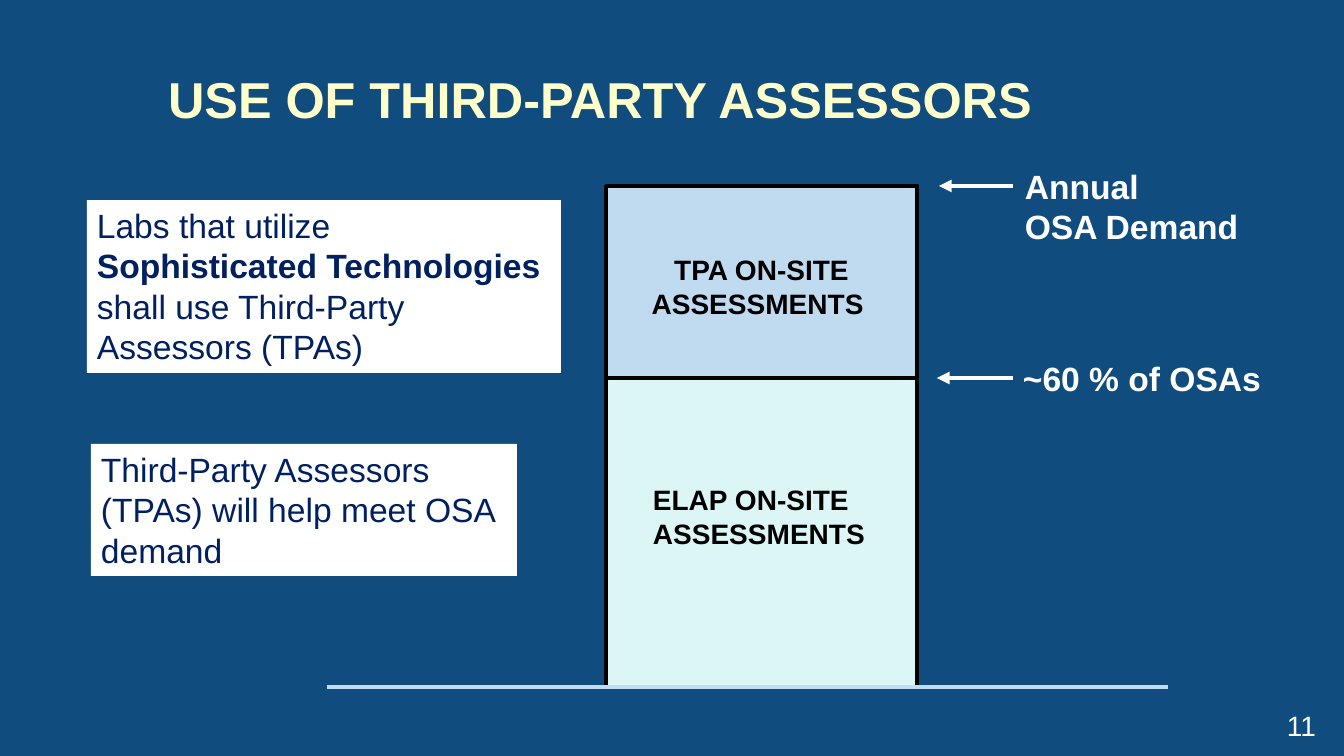
"""Build the slide on the use of third-party assessors."""
from dataclasses import dataclass

from lxml import etree
from pptx import Presentation
from pptx import util as u
from pptx.dml.color import RGBColor
from pptx.enum import shapes, text
from pptx.oxml.ns import qn

EMU_PER_PX = 914400 / 100.8
LEFT, CENTER, RIGHT = text.PP_ALIGN.LEFT, text.PP_ALIGN.CENTER, text.PP_ALIGN.RIGHT
TOP, MIDDLE = text.MSO_ANCHOR.TOP, text.MSO_ANCHOR.MIDDLE


@dataclass(frozen=True)
class Theme:
    font: str = "Arial"
    background: str = "104C7E"
    title: str = "FFFFCC"
    white: str = "FFFFFF"
    navy: str = "002060"
    black: str = "000000"
    baseline: str = "BEDDF7"
    tpa: str = "C0DBEF"
    elap: str = "DBF6F5"
    title_size: int = 36
    body_size: int = 24
    label_size: int = 20


THEME = Theme()

TITLE = [[("USE OF THIRD-PARTY ASSESSORS", True)]]
TITLE_BOX = (158, 18, 1179, 160)

BAR_LEFT, BAR_WIDTH = 606, 311
BASELINE_LEFT, BASELINE_RIGHT, BASELINE_Y = 327, 1168, 687
BARS = [
    {"top": 186, "fill": THEME.tpa, "line": 2.5},
    {"top": 378, "fill": THEME.elap, "line": 2.75},
]
BAR_LABELS = [
    {"box": (625, 248, 273, 78), "align": CENTER,
     "paragraphs": [[("TPA ON-SITE ASSESSMENTS ", True)]]},
    {"box": (643, 478, 237, 78), "align": LEFT,
     "paragraphs": [[("ELAP ON-SITE ASSESSMENTS", True)]]},
]

NOTES = [
    {"box": (87, 200, 474, 173),
     "paragraphs": [[("Labs that utilize ", False), ("Sophisticated Technologies ", True),
                     ("shall use Third-Party Assessors (TPAs)", False)]]},
    {"box": (91, 444, 426, 132),
     "paragraphs": [[("Third-Party Assessors (TPAs) will help meet OSA demand", False)]]},
]

ARROW_START = 1013
CALLOUTS = [
    {"tip": 939, "y": 186, "box": (1015, 161, 369, 92),
     "paragraphs": [[("Annual", True)], [("OSA Demand", True)]]},
    {"tip": 937, "y": 378, "box": (1013, 353, 343, 92),
     "paragraphs": [[("~60 % of OSAs", True)]]},
]

PAGE_NUMBER = [[("11", False)]]
PAGE_NUMBER_BOX = (1251, 706, 75, 39)


def px(length):
    return u.Emu(round(length * EMU_PER_PX))


def rgb(color):
    return RGBColor.from_string(color)


def write(shape, paragraphs, size, color, align=LEFT, anchor=TOP):
    frame = shape.text_frame
    frame.word_wrap = True
    frame.auto_size = text.MSO_AUTO_SIZE.NONE
    frame.vertical_anchor = anchor
    for index, runs in enumerate(paragraphs):
        paragraph = frame.add_paragraph() if index else frame.paragraphs[0]
        paragraph.alignment = align
        for words, bold in runs:
            run = paragraph.add_run()
            run.text = words
            run.font.name = THEME.font
            run.font.size = u.Pt(size)
            run.font.bold = bold
            run.font.color.rgb = rgb(color)


def add_text(slide, box, paragraphs, size, color, align=LEFT, anchor=TOP):
    shape = slide.shapes.add_textbox(*map(px, box))
    write(shape, paragraphs, size, color, align, anchor)
    return shape


def add_title(slide):
    title = slide.shapes.title
    title.left, title.top, title.width, title.height = map(px, TITLE_BOX)
    write(title, TITLE, THEME.title_size, THEME.title, anchor=MIDDLE)


def add_bar(slide, bar):
    shape = slide.shapes.add_shape(
        shapes.MSO_SHAPE.RECTANGLE, px(BAR_LEFT), px(bar["top"]),
        px(BAR_WIDTH), px(BASELINE_Y - bar["top"]))
    shape.shadow.inherit = False
    shape.fill.solid()
    shape.fill.fore_color.rgb = rgb(bar["fill"])
    shape.line.color.rgb = rgb(THEME.black)
    shape.line.width = u.Pt(bar["line"])


def add_line(slide, start, end, y, color, arrow=False):
    connector = slide.shapes.add_connector(
        shapes.MSO_CONNECTOR.STRAIGHT, px(start), px(y), px(end), px(y))
    connector.line.color.rgb = rgb(color)
    connector.line.width = u.Pt(3)
    if arrow:
        etree.SubElement(connector.line._get_or_add_ln(), qn("a:tailEnd"), type="triangle")
    etree.SubElement(connector._element.spPr, qn("a:effectLst"))


def main():
    presentation = Presentation()
    presentation.slide_width, presentation.slide_height = px(1344), px(756)
    slide = presentation.slides.add_slide(presentation.slide_layouts[5])
    slide.background.fill.solid()
    slide.background.fill.fore_color.rgb = rgb(THEME.background)

    add_title(slide)
    for bar in BARS:
        add_bar(slide, bar)
    add_line(slide, BASELINE_LEFT, BASELINE_RIGHT, BASELINE_Y, THEME.baseline)
    for label in BAR_LABELS:
        add_text(slide, label["box"], label["paragraphs"], THEME.label_size,
                 THEME.black, label["align"])
    for callout in CALLOUTS:
        add_line(slide, ARROW_START, callout["tip"], callout["y"], THEME.white, arrow=True)
        add_text(slide, callout["box"], callout["paragraphs"], THEME.body_size, THEME.white)
    for note in NOTES:
        box = add_text(slide, note["box"], note["paragraphs"], THEME.body_size, THEME.navy)
        box.fill.solid()
        box.fill.fore_color.rgb = rgb(THEME.white)
    add_text(slide, PAGE_NUMBER_BOX, PAGE_NUMBER, THEME.label_size, THEME.white, RIGHT, MIDDLE)

    presentation.save("out.pptx")


if __name__ == "__main__":
    main()
